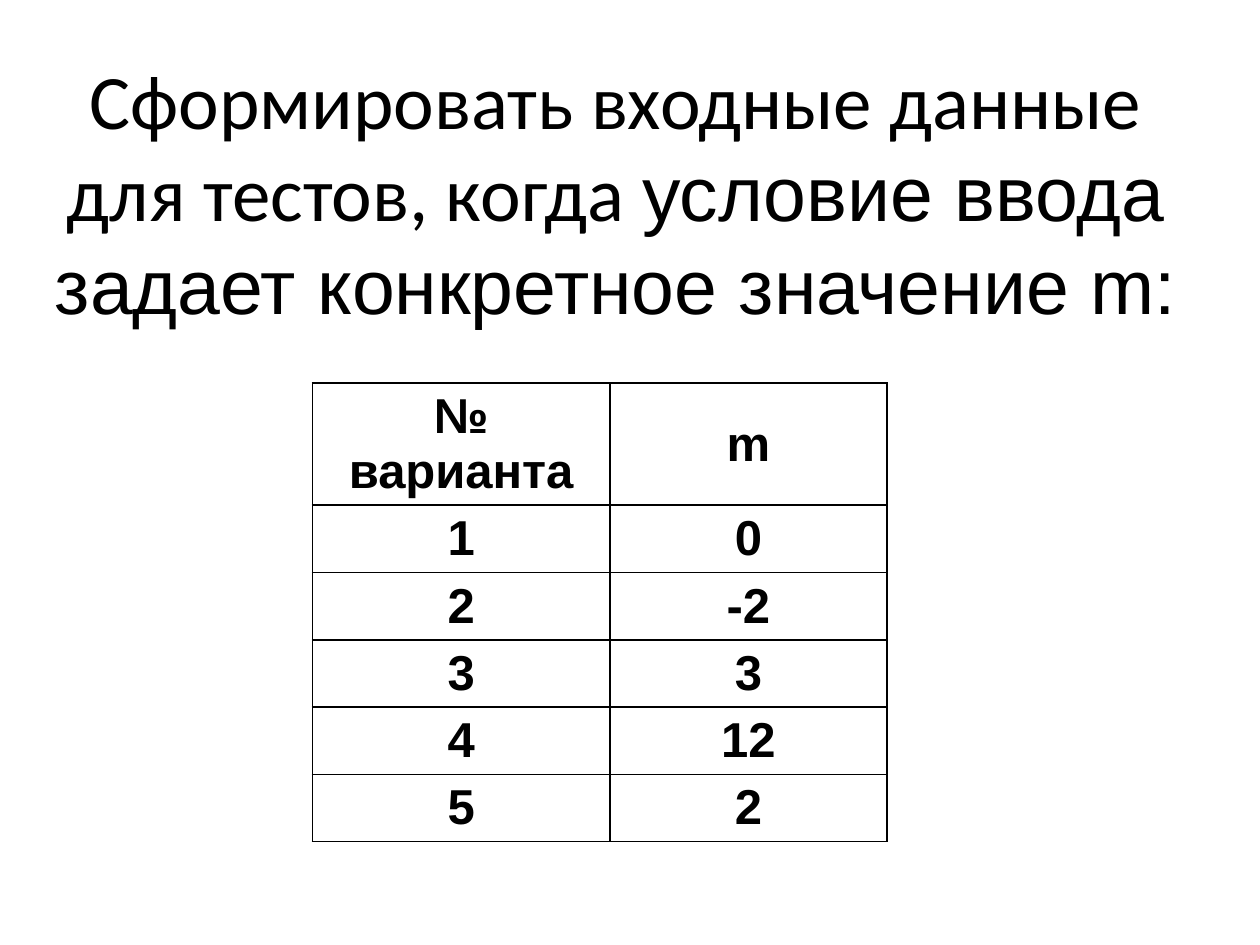
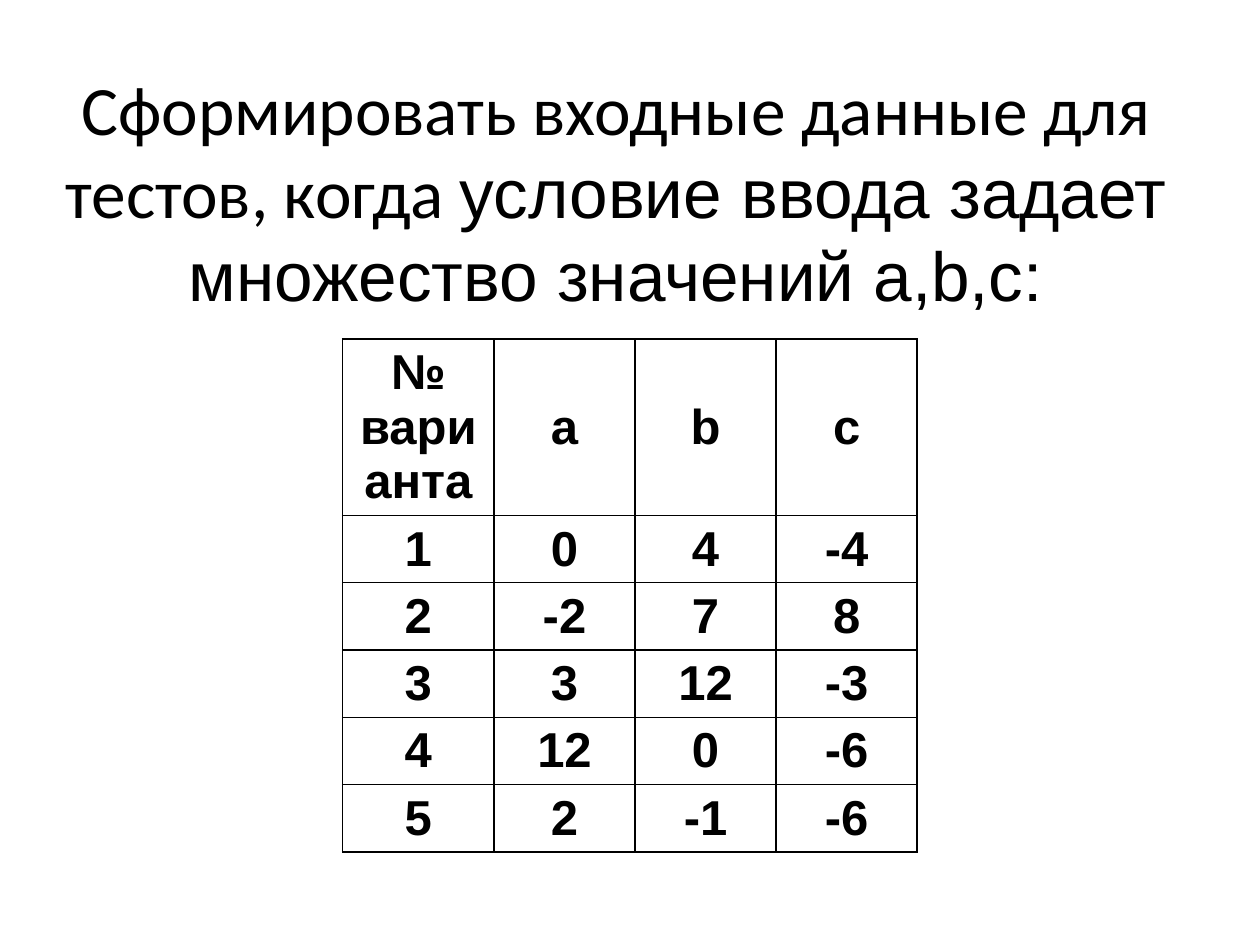
from lxml import etree
from pptx import Presentation
from pptx.dml.color import RGBColor
from pptx.enum.text import MSO_ANCHOR, MSO_AUTO_SIZE, PP_ALIGN
from pptx.oxml.ns import qn
from pptx.util import Inches, Pt

CENTER = PP_ALIGN.CENTER
MIDDLE = MSO_ANCHOR.MIDDLE
NO_AUTOFIT = MSO_AUTO_SIZE.NONE

BLACK = RGBColor(0x00, 0x00, 0x00)
WHITE = RGBColor(0xFF, 0xFF, 0xFF)
TITLE_ONLY = 5
TASK = "Сформировать входные данные для тестов, когда "
VARIANT = "№ варианта"
ROW_HEIGHT = 0.53


def add_text(paragraph, text, font="Arial", size=28, bold=False, color=BLACK):
    run = paragraph.add_run()
    run.text = text
    run.font.name = font
    run.font.size = Pt(size)
    run.font.bold = bold
    run.font.color.rgb = color


def add_borders(cell, color=BLACK, width=1):
    properties = cell._tc.get_or_add_tcPr()
    for position, side in enumerate(("lnL", "lnR", "lnT", "lnB")):
        line = etree.Element(qn(f"a:{side}"), w=str(Pt(width)))
        fill = etree.SubElement(line, qn("a:solidFill"))
        etree.SubElement(fill, qn("a:srgbClr"), val=str(color))
        properties.insert(position, line)


class TestTaskDeck:
    def __init__(self):
        self.presentation = Presentation()
        self.presentation.slide_width = Inches(10)
        self.presentation.slide_height = Inches(7.5)
        self.slide = None

    def add_slide(self):
        layout = self.presentation.slide_layouts[TITLE_ONLY]
        self.slide = self.presentation.slides.add_slide(layout)

    def add_title(self, condition, size):
        title = self.slide.shapes.title
        title.left, title.top = Inches(0.28), Inches(0.3)
        title.width, title.height = Inches(9.22), Inches(2.43)
        frame = title.text_frame
        frame.auto_size = NO_AUTOFIT
        frame.vertical_anchor = MIDDLE
        paragraph = frame.paragraphs[0]
        paragraph.alignment = CENTER
        add_text(paragraph, TASK, font="Calibri", size=size)
        add_text(paragraph, condition, size=size)

    def add_variants(self, left, top, column_widths, header_height, parameters, variants):
        """Add a table with one numbered row of parameter values per variant."""
        rows = [(VARIANT, *parameters)]
        rows += [(number, *values) for number, values in enumerate(variants, 1)]
        heights = [header_height] + [ROW_HEIGHT] * len(variants)
        table = self.slide.shapes.add_table(
            len(rows), len(column_widths), Inches(left), Inches(top),
            Inches(sum(column_widths)), Inches(sum(heights))).table
        table.first_row = table.horz_banding = False
        for column, width in zip(table.columns, column_widths):
            column.width = Inches(width)
        for row, height, values in zip(table.rows, heights, rows):
            row.height = Inches(height)
            for cell, value in zip(row.cells, values):
                self.fill_cell(cell, str(value))

    def fill_cell(self, cell, text):
        cell.fill.solid()
        cell.fill.fore_color.rgb = WHITE
        cell.vertical_anchor = MIDDLE
        paragraph = cell.text_frame.paragraphs[0]
        paragraph.alignment = CENTER
        add_text(paragraph, text, bold=True)
        add_borders(cell)


def main():
    deck = TestTaskDeck()

    deck.add_slide()
    deck.add_title("условие ввода задает конкретное значение m:", size=44)
    deck.add_variants(2.48, 3.04, [2.36, 2.2], 0.97, "m",
                      [(0,), (-2,), (3,), (12,), (2,)])

    deck.add_slide()
    deck.add_title("условие ввода задает множество значений a,b,c:", size=39.6)
    deck.add_variants(2.72, 2.69, [1.2] + [1.12] * 3, 1.4, "abc",
                      [(0, 4, -4), (-2, 7, 8), (3, 12, -3), (12, 0, -6), (2, -1, -6)])

    deck.presentation.save("out.pptx")


if __name__ == "__main__":
    main()
